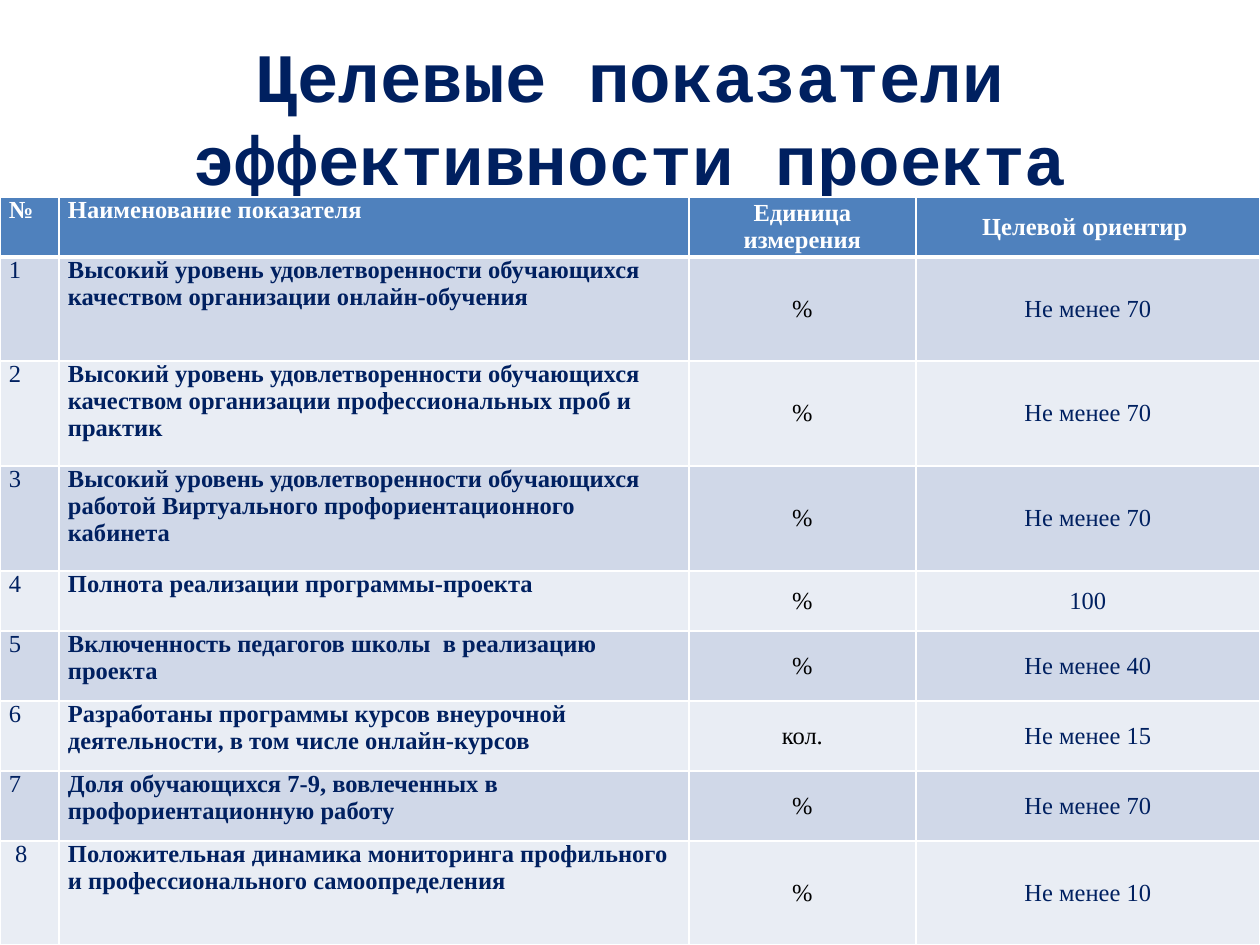
from lxml import etree
from pptx import Presentation
from pptx.dml.color import RGBColor
from pptx.enum.text import MSO_ANCHOR, PP_ALIGN
from pptx.oxml.ns import qn
from pptx.util import Pt

PX = 914400 // 126
TOP, MIDDLE = MSO_ANCHOR.TOP, MSO_ANCHOR.MIDDLE
LEFT, CENTER, JUSTIFY = PP_ALIGN.LEFT, PP_ALIGN.CENTER, PP_ALIGN.JUSTIFY
COLORS = {"navy": "002060", "black": "000000", "white": "FFFFFF",
          "header": "4F81BD", "odd": "D0D8E8", "even": "E9EDF4"}


def style(p, font, size, color, bold, align):
    p.alignment = align
    for r in p.runs:
        r.font.name = font
        r.font.size = Pt(size)
        r.font.bold = bold
        r.font.color.rgb = RGBColor.from_string(COLORS[color])


def add_borders(cell, bottom):
    # Borders must come before the fill in the cell properties
    tc_pr = cell._tc.get_or_add_tcPr()
    for i, (side, width) in enumerate([("L", 1), ("R", 1), ("T", 1), ("B", bottom)]):
        ln = etree.Element(qn(f"a:ln{side}"), w=str(Pt(width)))
        fill = etree.SubElement(ln, qn("a:solidFill"))
        etree.SubElement(fill, qn("a:srgbClr"), val=COLORS["white"])
        tc_pr.insert(i, ln)


prs = Presentation()
prs.slide_width, prs.slide_height = 1260 * PX, 945 * PX
s = prs.slides.add_slide(prs.slide_layouts[6])

# Title
sp = s.shapes.add_textbox(63 * PX, 38 * PX, 1134 * PX, 157 * PX)
tf = sp.text_frame
tf.word_wrap = True
tf.vertical_anchor = MIDDLE
tf.margin_top = tf.margin_bottom = 0
tf.text = "Целевые показатели эффективности проекта"
style(tf.paragraphs[0], "Courier New", 39.6, "navy", True, CENTER)

# Table content
rows = [
    ("№", "Наименование показателя", "Единица измерения", "Целевой ориентир "),
    ("1", "Высокий уровень удовлетворенности обучающихся качеством организации "
     "онлайн-обучения", "%", "Не менее 70"),
    ("2", "Высокий уровень удовлетворенности обучающихся качеством организации "
     "профессиональных проб и практик", "%", "Не менее 70"),
    ("3", "Высокий уровень удовлетворенности обучающихся работой Виртуального "
     "профориентационного кабинета", "%", "Не менее 70"),
    ("4", "Полнота реализации программы-проекта", "%", "100"),
    ("5", "Включенность педагогов школы  в реализацию проекта", "%", "Не менее 40"),
    ("6", "Разработаны программы курсов внеурочной деятельности, в том числе "
     "онлайн-курсов", "кол.", "Не менее 15"),
    ("7 ", "Доля обучающихся 7-9, вовлеченных в профориентационную работу",
     "%", "Не менее 70"),
    (" 8", "Положительная динамика мониторинга профильного и профессионального "
     "самоопределения", "%", "Не менее 10"),
]
col_widths = [59, 630, 227, 344]
row_heights = [60, 104, 105, 105, 60, 70, 70, 70, 104]

# Column rules: body alignment, anchor, body color, body bold
columns = [(LEFT, TOP, "navy", False), (LEFT, TOP, "navy", True),
           (CENTER, MIDDLE, "black", False), (CENTER, MIDDLE, "navy", False)]

# Table grid
table = s.shapes.add_table(len(rows), len(columns), 0, 197 * PX,
                           sum(col_widths) * PX, sum(row_heights) * PX).table
for col, width in zip(table.columns, col_widths):
    col.width = width * PX
for row, height in zip(table.rows, row_heights):
    row.height = height * PX

# Table cells
for i, texts in enumerate(rows):
    header = i == 0
    fill = "header" if header else "odd" if i % 2 else "even"
    for j, (align, anchor, color, bold) in enumerate(columns):
        cell = table.cell(i, j)
        cell.margin_left = cell.margin_right = 9 * PX
        cell.margin_top = cell.margin_bottom = 0
        cell.vertical_anchor = anchor
        cell.fill.solid()
        cell.fill.fore_color.rgb = RGBColor.from_string(COLORS[fill])
        add_borders(cell, 3 if header else 1)
        cell.text_frame.text = texts[j]
        if j == 0 or (header and j == 1):
            align = JUSTIFY
        style(cell.text_frame.paragraphs[0], "Times New Roman", 14,
              "white" if header else color, header or bold, align)

prs.save("out.pptx")
